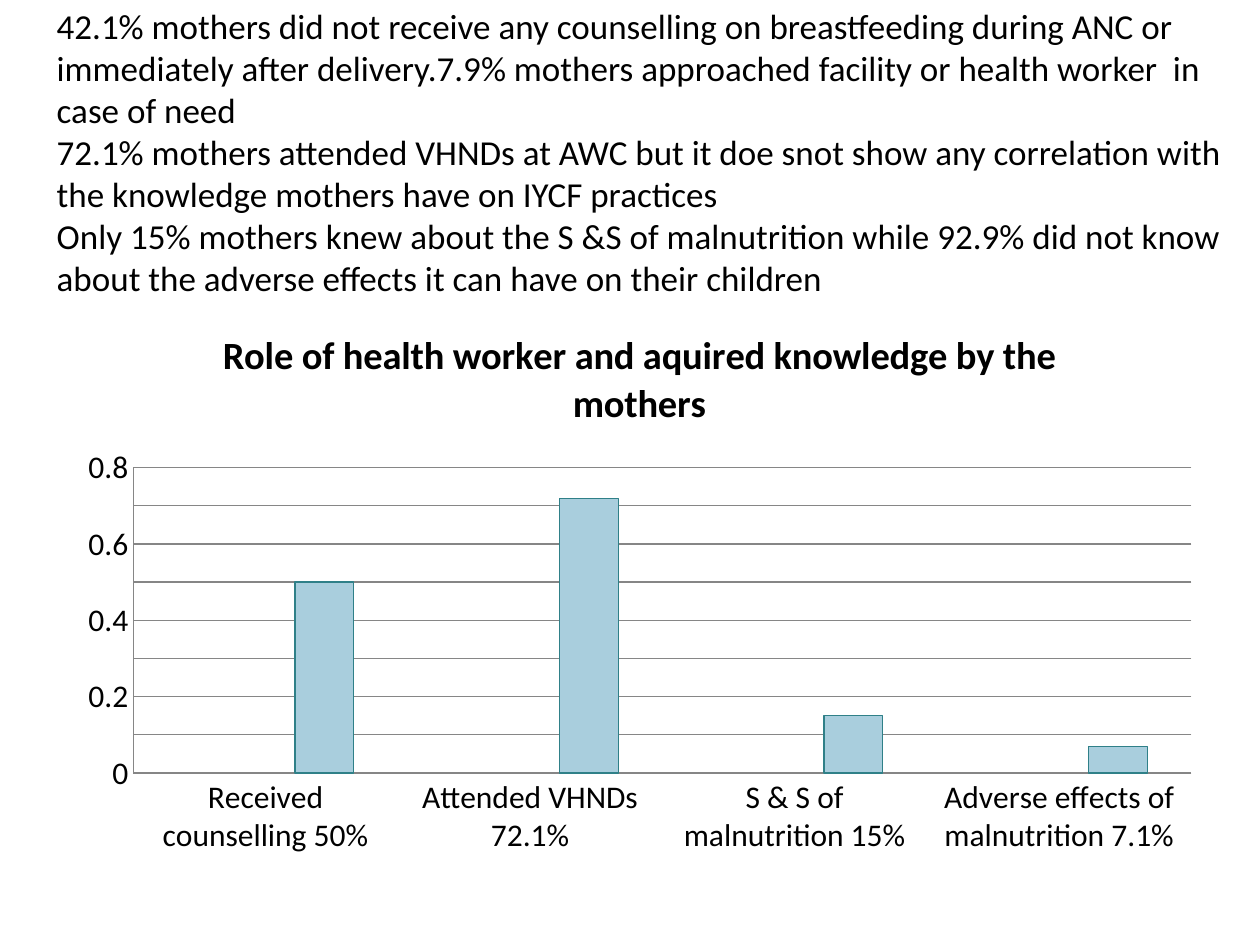
from lxml import etree
from pptx import Presentation
from pptx.chart.data import CategoryChartData
from pptx.dml.color import RGBColor
from pptx.enum import chart as charts, text
from pptx.oxml import parse_xml
from pptx.oxml.ns import nsdecls
from pptx.util import Inches, Pt

BLACK = RGBColor(0x00, 0x00, 0x00)
GRAY = RGBColor(0x86, 0x86, 0x86)
BAR_FILL = RGBColor(0xA9, 0xCE, 0xDD)
BAR_LINE = RGBColor(0x2F, 0x80, 0x88)
FONT = "Calibri"

FINDINGS = [
    "42.1% mothers did not receive any counselling on breastfeeding during ANC or "
    "immediately after delivery.7.9% mothers approached facility or health worker  in case of need",
    "72.1% mothers attended VHNDs at AWC but it doe snot show any correlation with "
    "the knowledge mothers have on IYCF practices",
    "Only 15% mothers knew about the S &S of malnutrition while 92.9% did not know "
    "about the adverse effects it can have on their children",
]


def style_font(font, size, bold=False):
    font.name = FONT
    font.size = Pt(size)
    font.bold = bold
    font.color.rgb = BLACK


presentation = Presentation()
presentation.slide_width = Inches(10)
presentation.slide_height = Inches(7.5)
slide = presentation.slides.add_slide(presentation.slide_layouts[5])

# Findings in the title, one per line break
title = slide.shapes.title
title.left, title.top = Inches(0.35), Inches(0.3)
title.width, title.height = Inches(9.65), Inches(1.8)
title_frame = title.text_frame
title_frame.text = "\v".join(FINDINGS)
title_frame.word_wrap = True
title_frame.auto_size = text.MSO_AUTO_SIZE.NONE
title_frame.vertical_anchor = text.MSO_ANCHOR.MIDDLE
paragraph = title_frame.paragraphs[0]
paragraph.alignment = text.PP_ALIGN.LEFT
for run in paragraph.runs:
    style_font(run.font, 20)

# Column chart: the first two series are empty
data = CategoryChartData()
data.categories = [
    "Received counselling 50%",
    "Attended VHNDs 72.1%",
    "S & S of malnutrition 15%",
    "Adverse effects of malnutrition 7.1%",
]
data.add_series("Series 1", [None] * 4)
data.add_series("Series 2", [None] * 4)
data.add_series("Series 3", [0.5, 0.72, 0.15, 0.07])
chart = slide.shapes.add_chart(
    charts.XL_CHART_TYPE.COLUMN_CLUSTERED,
    Inches(0.51), Inches(2.41), Inches(9.13), Inches(4.49), data,
).chart
chart.has_legend = False
style_font(chart.font, 18)

# Chart title
chart.has_title = True
chart_title = chart.chart_title.text_frame
chart_title.text = "Role of health worker and aquired knowledge by the mothers"
style_font(chart_title.paragraphs[0].runs[0].font, 22, bold=True)
chart.chart_title.include_in_layout = False

# Bars
plot = chart.plots[0]
plot.gap_width = 150
plot.overlap = 0
plot.vary_by_categories = False
for series in plot.series:
    series.format.fill.solid()
    series.format.fill.fore_color.rgb = BAR_FILL
    series.format.line.color.rgb = BAR_LINE
    series.format.line.width = Pt(0.75)

# Axes and gridlines
value_axis = chart.value_axis
value_axis.minimum_scale, value_axis.maximum_scale = 0, 0.8
value_axis.major_unit = 0.1
value_axis.has_major_gridlines = True
value_axis.tick_labels.number_format = "General"
value_axis.tick_labels.number_format_is_linked = False
for axis in (chart.category_axis, value_axis):
    axis.major_tick_mark = charts.XL_TICK_MARK.NONE
    axis.minor_tick_mark = charts.XL_TICK_MARK.NONE
for line in (chart.category_axis.format.line, value_axis.format.line,
             value_axis.major_gridlines.format.line):
    line.color.rgb = GRAY
    line.width = Pt(0.75)

# Inner plot area, as fractions of the chart
layout = parse_xml(
    f'<c:layout {nsdecls("c")}><c:manualLayout><c:layoutTarget val="inner"/>'
    '<c:xMode val="edge"/><c:yMode val="edge"/></c:manualLayout></c:layout>'
)
for tag, fraction in (("x", 0.06), ("y", 0.29), ("w", 0.92), ("h", 0.54)):
    namespace = etree.QName(layout).namespace
    etree.SubElement(layout[0], f"{{{namespace}}}{tag}").set("val", str(fraction))
plot_area = chart.element.chart.plotArea
for old_layout in plot_area.findall(layout.tag):
    plot_area.remove(old_layout)
plot_area.insert(0, layout)

presentation.save("out.pptx")
